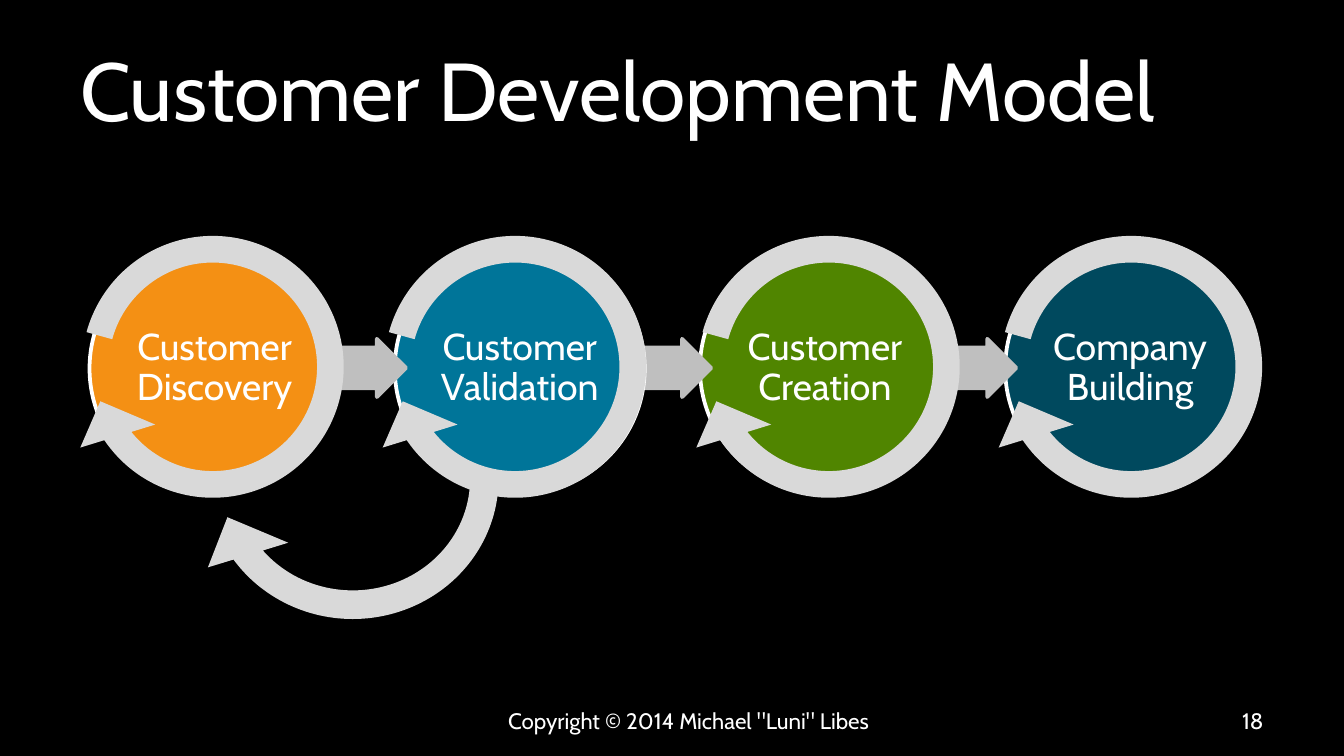
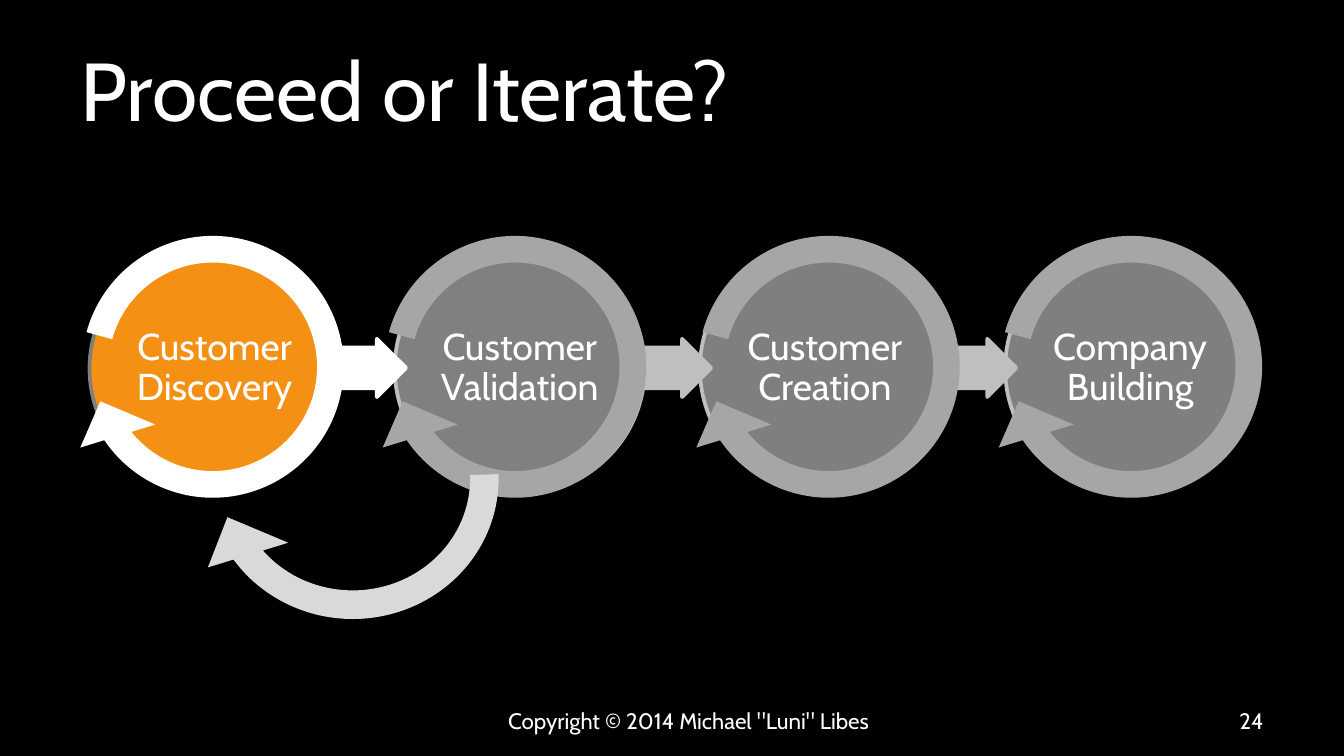
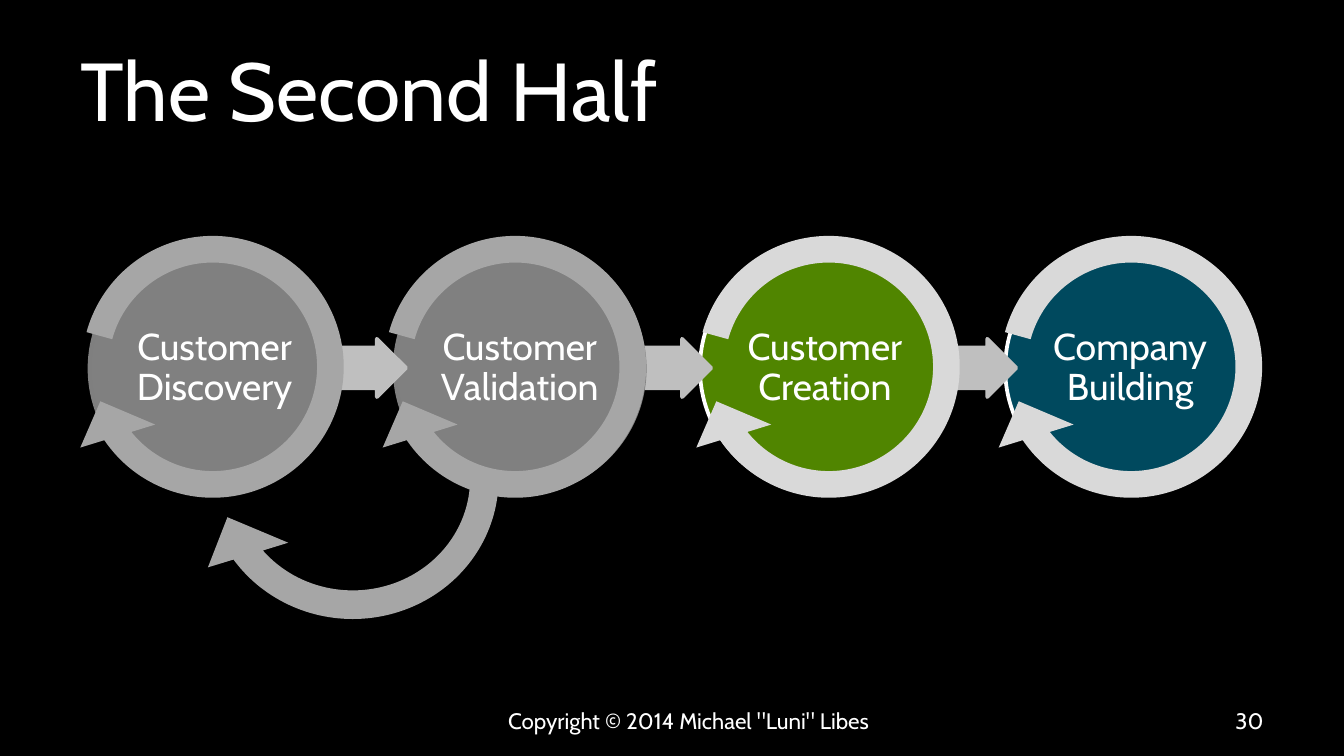
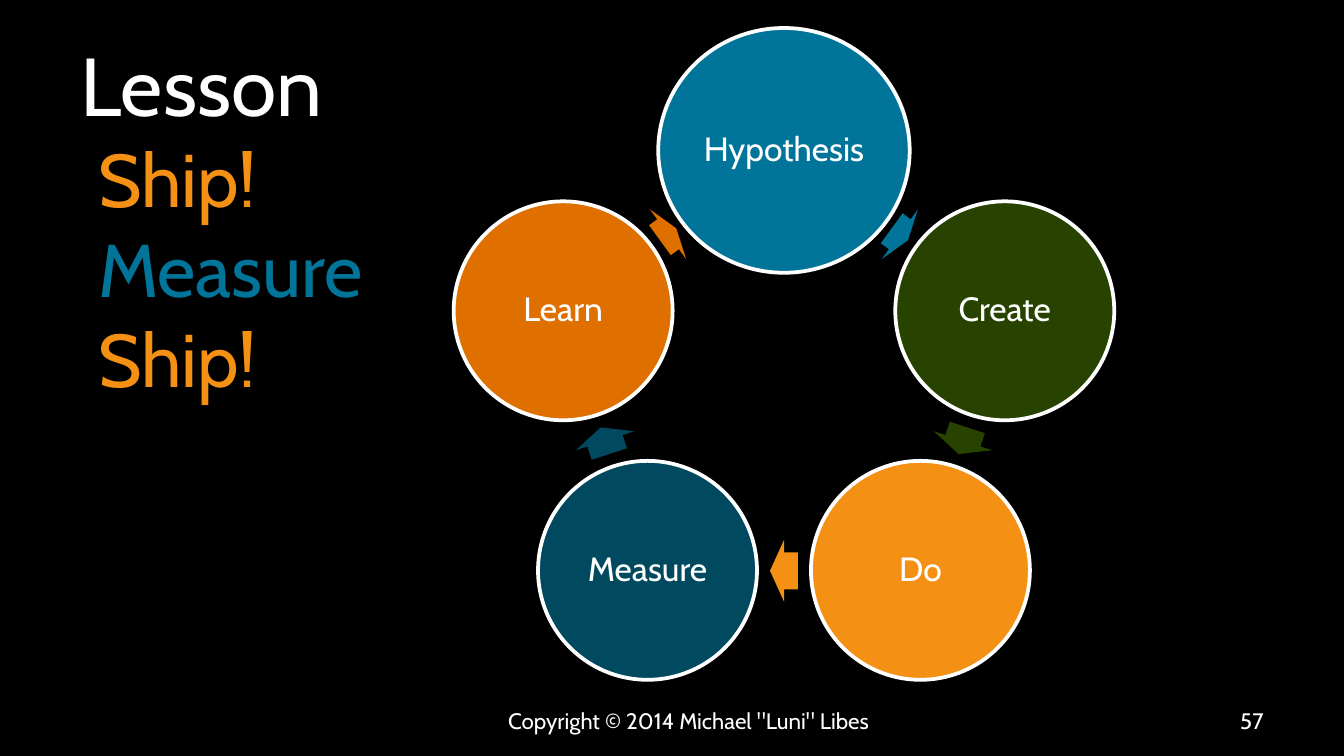
import math
from dataclasses import dataclass

import lxml.etree
import pptx
import pptx.dml.color
import pptx.enum.shapes
import pptx.enum.text
import pptx.oxml.ns
import pptx.util

SHAPE = pptx.enum.shapes.MSO_SHAPE
ALIGN = pptx.enum.text.PP_ALIGN
ANCHOR = pptx.enum.text.MSO_ANCHOR


@dataclass(frozen=True)
class Theme:
    font: str = "Cabin"
    black: str = "000000"
    white: str = "FFFFFF"
    orange: str = "F49014"
    rust: str = "DF7000"
    blue: str = "007599"
    navy: str = "00495E"
    green: str = "508500"
    forest: str = "284200"
    pale: str = "D9D9D9"
    silver: str = "BFBFBF"
    gray: str = "A6A6A6"
    muted: str = "808080"
    edge: str = "7F7F7F"
    title: int = 44
    subtitle: int = 40
    stage: int = 20
    node: int = 18
    footer: int = 12
    outline: int = 2


T = Theme()
COLUMNS = 120
INSCRIBED = math.sqrt(0.5)
STAGES = ["Customer Discovery", "Customer Validation", "Customer Creation", "Company Building"]
STAGE_COLORS = [T.orange, T.blue, T.green, T.navy]
STAGE_LEFT, STAGE_TOP, STAGE_SIZE, STAGE_PITCH = 8, 21.75, 22.32, 27.25
RING_LEFTS, RING_TOP, RING_SIZE = [5, 32, 60, 87], 18.75, 28
CYCLE = [
    ("Hypothesis", T.blue),
    ("Create", T.forest),
    ("Do", T.orange),
    ("Measure", T.navy),
    ("Learn", T.rust),
]
CYCLE_X, CYCLE_Y, NODE_RADIUS, ARROW_RADIUS = 70, 34.16, 20.73, 16.8


class Deck:
    def __init__(self, theme):
        self.theme = theme
        self.prs = pptx.Presentation()
        self.prs.slide_width = pptx.util.Inches(10)
        self.prs.slide_height = pptx.util.Inches(5.625)
        fill = self.prs.slide_master.background.fill
        fill.solid()
        fill.fore_color.rgb = self.rgb(theme.black)
        self.s = None

    def rgb(self, color):
        return pptx.dml.color.RGBColor.from_string(color)

    def grid(self, *cells):
        return [round(self.prs.slide_width * c / COLUMNS) for c in cells]

    def style(self, r, size, color):
        r.font.name = self.theme.font
        r.font.size = pptx.util.Pt(size)
        r.font.color.rgb = self.rgb(color)

    def slide(self, lines, number, box, anchor=ANCHOR.MIDDLE):
        self.s = self.prs.slides.add_slide(self.prs.slide_layouts[5])
        self.title(lines, box, anchor)
        self.text('Copyright © 2014 Michael "Luni" Libes', (39, 62.5, 45, 3.6), self.theme.footer)
        self.text(str(number), (86, 62.5, 28, 3.6), self.theme.footer, ALIGN.RIGHT)

    def title(self, lines, box, anchor):
        sp = self.s.shapes.title
        sp.left, sp.top, sp.width, sp.height = self.grid(*box)
        tf = sp.text_frame
        tf.auto_size = pptx.enum.text.MSO_AUTO_SIZE.NONE
        tf.vertical_anchor = anchor
        p = tf.paragraphs[0]
        p.text = "\v".join(text for text, size, color in lines)
        p.alignment = ALIGN.LEFT
        for r, (text, size, color) in zip(p.runs, lines):
            self.style(r, size, color)
        qn = pptx.oxml.ns.qn
        for br, (text, size, color) in zip(p._p.findall(qn("a:br")), lines):
            lxml.etree.SubElement(br, qn("a:rPr"), sz=str(size * 100))
        if len(lines) > 1:
            indent = pptx.util.Inches(0.13)
            pPr = p._p.get_or_add_pPr()
            pPr.set("marL", str(indent))
            pPr.set("indent", str(-indent))

    def text(self, text, box, size, align=ALIGN.CENTER, inset=None, spacing=None):
        tf = self.s.shapes.add_textbox(*self.grid(*box)).text_frame
        tf.word_wrap = True
        tf.vertical_anchor = ANCHOR.MIDDLE
        if inset is not None:
            margin = pptx.util.Inches(inset)
            tf.margin_left = tf.margin_right = tf.margin_top = tf.margin_bottom = margin
        p = tf.paragraphs[0]
        p.text = text
        p.alignment = align
        p.line_spacing = spacing
        self.style(p.runs[0], size, self.theme.white)

    def shape(self, kind, box, fill, line=None, adjustments=(), rotation=0):
        sp = self.s.shapes.add_shape(kind, *self.grid(*box))
        sp.shadow.inherit = False
        sp.fill.solid()
        sp.fill.fore_color.rgb = self.rgb(fill)
        if line:
            sp.line.color.rgb = self.rgb(line)
            sp.line.width = pptx.util.Pt(self.theme.outline)
        else:
            sp.line.fill.background()
        for i, value in enumerate(adjustments):
            sp.adjustments[i] = value
        sp.rotation = rotation

    def disc(self, text, box, fill, line, size, inset):
        left, top, width, height = box
        self.shape(SHAPE.OVAL, box, fill, line)
        w, h = width * INSCRIBED, height * INSCRIBED
        inner = (left + (width - w) / 2, top + (height - h) / 2, w, h)
        self.text(text, inner, size, inset=inset, spacing=0.9)

    def arrow(self, box, fill, shaft, line=None, rotation=0):
        self.shape(SHAPE.RIGHT_ARROW, box, fill, line, (shaft, 0.5), rotation)

    def turn(self, box, fill, start):
        self.shape(SHAPE.CIRCULAR_ARROW, box, fill,
                   adjustments=(8.5 / 100, 11.42, 86.34, start, 12.5 / 100))


def stages_slide(deck, title, number, fills, outlines, rings, arrows, loop):
    t = deck.theme
    deck.slide([(title, t.title, t.white)], number, (6, 2.25, 108, 11.25))
    for i in reversed(range(len(STAGES))):
        left = STAGE_LEFT + i * STAGE_PITCH
        deck.disc(STAGES[i], (left, STAGE_TOP, STAGE_SIZE, STAGE_SIZE),
                  fills[i], outlines[i], t.stage, 0.01)
        if i:
            deck.arrow((left - 9, 30.25, 10, 5.2), arrows[i - 1], 0.7, arrows[i - 1])
    for left, color in zip(RING_LEFTS, rings):
        deck.turn((left, RING_TOP, RING_SIZE, RING_SIZE), color, 117.21)
    deck.turn((16, 27.75, 31, 30), loop, 214.91)


def around(radius, degrees, width, height):
    a = math.radians(degrees)
    x = CYCLE_X + radius * math.sin(a)
    y = CYCLE_Y - radius * math.cos(a)
    return x - width / 2, y - height / 2, width, height


def cycle_slide(deck, number):
    t = deck.theme
    lines = [
        ("Lesson", t.title, t.white),
        ("Ship!", t.subtitle, t.orange),
        ("Measure", t.subtitle, t.blue),
        ("Ship!", t.subtitle, t.orange),
    ]
    deck.slide(lines, number, (6, 2.5, 108, 40.2), ANCHOR.TOP)
    step = 360 / len(CYCLE)
    nudges = {0: 2, len(CYCLE) - 1: -2}
    for i, (text, color) in enumerate(CYCLE):
        size = (19.55, 19.55) if i else (22.45, 21.85)
        deck.disc(text, around(NODE_RADIUS, i * step, *size), color, t.white, t.node, 0.03)
        angle = (i + 0.5) * step
        nudge = nudges.get(i, 0)
        width = 1.8 if nudge else 2.5
        deck.arrow(around(ARROW_RADIUS, angle + nudge, width, 5.5), color, 0.6, rotation=angle)


def main():
    deck = Deck(T)
    stages_slide(deck, "Customer Development Model", 18, STAGE_COLORS,
                 [T.white] * 4, [T.pale] * 4, [T.silver] * 3, T.pale)
    stages_slide(deck, "Proceed or Iterate?", 24, [T.orange, T.muted, T.edge, T.edge],
                 [T.edge] + [T.silver] * 3, [T.white] + [T.gray] * 3,
                 [T.white] + [T.silver] * 2, T.pale)
    stages_slide(deck, "The Second Half", 30, [T.muted] * 2 + STAGE_COLORS[2:],
                 [T.edge] * 2 + [T.white] * 2, [T.gray] * 2 + [T.pale] * 2,
                 [T.silver] * 3, T.gray)
    cycle_slide(deck, 57)
    deck.prs.save("out.pptx")


if __name__ == "__main__":
    main()
